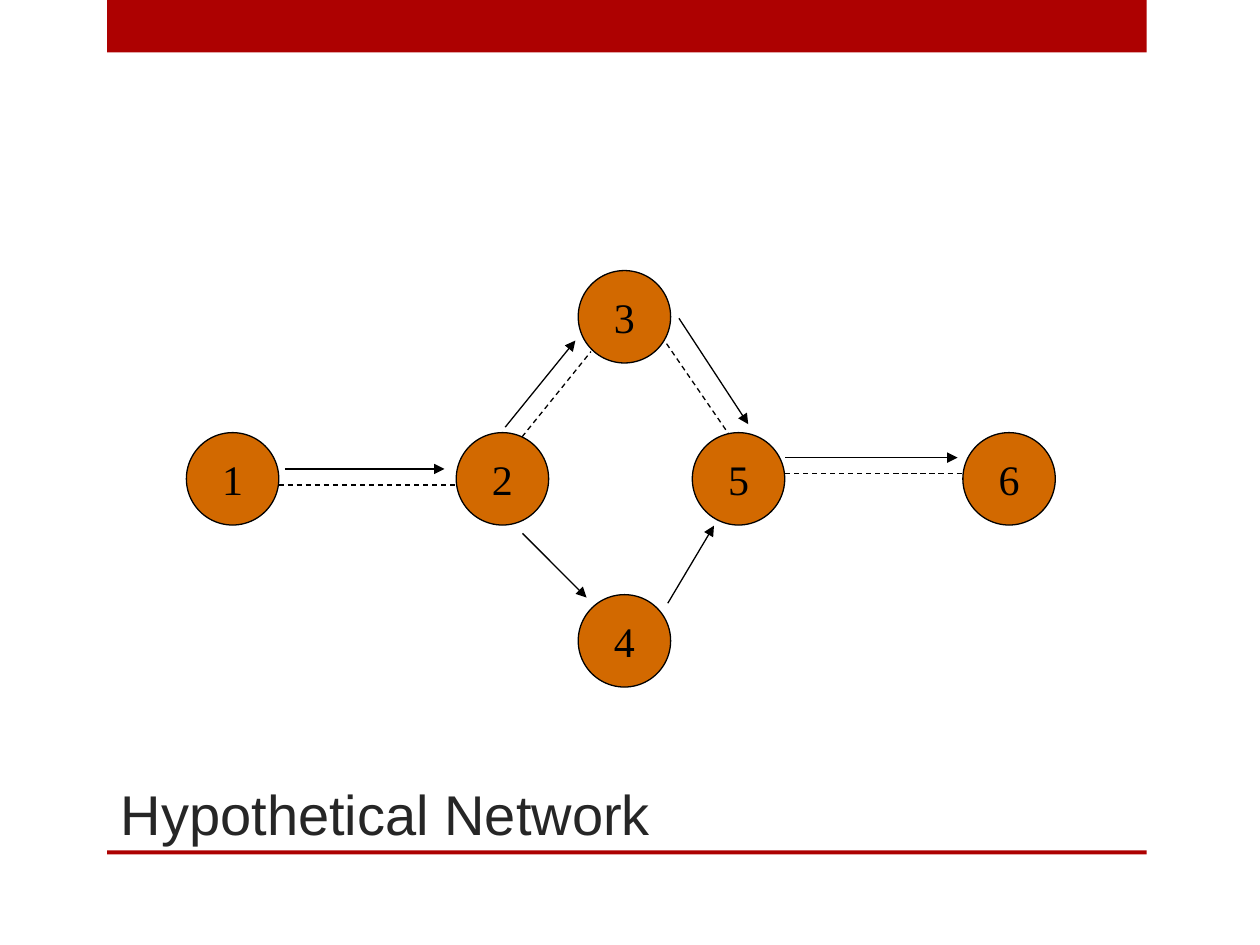
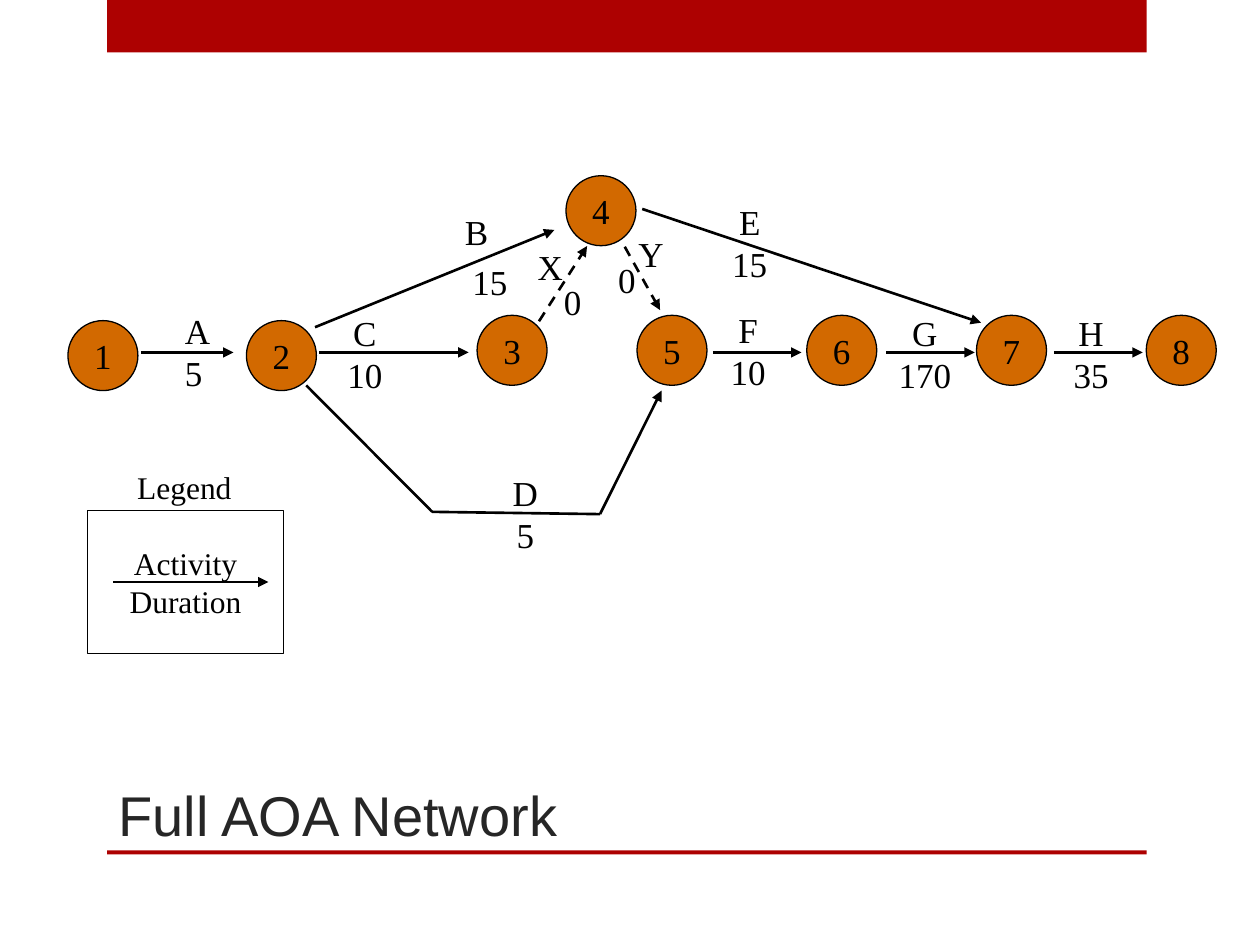
from dataclasses import dataclass

from lxml.etree import SubElement
from pptx import Presentation
from pptx.dml.color import RGBColor
from pptx.enum.dml import MSO_LINE
from pptx.enum.shapes import MSO_CONNECTOR, MSO_SHAPE
from pptx.enum.text import MSO_ANCHOR, MSO_AUTO_SIZE, PP_ALIGN
from pptx.oxml.ns import qn
from pptx.util import Pt


@dataclass(frozen=True)
class Theme:
    band: RGBColor = RGBColor(0xAD, 0x01, 0x01)
    node: RGBColor = RGBColor(0xD2, 0x69, 0x00)
    ink: RGBColor = RGBColor(0, 0, 0)
    title: RGBColor = RGBColor(0x26, 0x26, 0x26)
    title_font: str = "Arial"
    body_font: str = "Times New Roman"
    title_size: float = 32
    large_size: float = 24
    label_size: float = 20
    legend_size: float = 18
    thin: float = 0.75
    thick: float = 1.5


THEME = Theme()


def write_text(shape, text, size=THEME.label_size, font=THEME.body_font,
               color=THEME.ink, align=PP_ALIGN.CENTER, anchor=MSO_ANCHOR.MIDDLE,
               wrap=False, fit=MSO_AUTO_SIZE.NONE):
    """Fill a shape with one paragraph; a newline becomes a line break."""
    frame = shape.text_frame
    frame.word_wrap = wrap
    frame.auto_size = fit
    frame.vertical_anchor = anchor
    paragraph = frame.paragraphs[0]
    paragraph.text = text
    paragraph.alignment = align
    for run in paragraph.runs:
        run.font.size = Pt(size)
        run.font.name = font
        run.font.color.rgb = color


class NetworkDeck:
    def __init__(self, theme):
        self.theme = theme
        self.presentation = Presentation()
        self.presentation.slide_width = Pt(720)
        self.presentation.slide_height = Pt(540)
        self.slide = None

    def add_slide(self, title, left, top, width, height):
        """Start a slide with the shared bands and title style."""
        layout = self.presentation.slide_layouts.get_by_name("Title Only")
        self.slide = self.presentation.slides.add_slide(layout)
        for band_top, band_height in ((0, 30), (486, 2.2)):
            self.add_shape(MSO_SHAPE.RECTANGLE, 61.2, band_top, 594, band_height,
                           fill=self.theme.band)
        placeholder = self.slide.shapes.title
        placeholder.left, placeholder.top = Pt(left), Pt(top)
        placeholder.width, placeholder.height = Pt(width), Pt(height)
        write_text(placeholder, title, size=self.theme.title_size,
                   font=self.theme.title_font, color=self.theme.title,
                   align=PP_ALIGN.LEFT, anchor=MSO_ANCHOR.BOTTOM, wrap=True)

    def add_shape(self, kind, left, top, width, height, fill=None, line=None):
        shape = self.slide.shapes.add_shape(kind, Pt(left), Pt(top), Pt(width), Pt(height))
        shape.shadow.inherit = False
        if fill is None:
            shape.fill.background()
        else:
            shape.fill.solid()
            shape.fill.fore_color.rgb = fill
        if line is None:
            shape.line.fill.background()
        else:
            shape.line.color.rgb = line
            shape.line.width = Pt(self.theme.thin)
        return shape

    def add_node(self, name, center_x, center_y, diameter, size):
        node = self.add_shape(MSO_SHAPE.OVAL, center_x - diameter / 2,
                              center_y - diameter / 2, diameter, diameter,
                              fill=self.theme.node, line=self.theme.ink)
        write_text(node, name, size=size)

    def add_line(self, start, end, width, arrow=True, dashed=False):
        connector = self.slide.shapes.add_connector(
            MSO_CONNECTOR.STRAIGHT, *(Pt(value) for value in (*start, *end)))
        connector.line.color.rgb = self.theme.ink
        connector.line.width = Pt(width)
        if dashed:
            connector.line.dash_style = MSO_LINE.DASH
        properties = connector.element.spPr
        if arrow:
            SubElement(properties.find(qn("a:ln")), qn("a:tailEnd"), type="triangle")
        SubElement(properties, qn("a:effectLst"))

    def add_label(self, text, left, top, width, height, **text_format):
        box = self.slide.shapes.add_textbox(Pt(left), Pt(top), Pt(width), Pt(height))
        write_text(box, text, anchor=MSO_ANCHOR.TOP,
                   fit=MSO_AUTO_SIZE.SHAPE_TO_FIT_TEXT, **text_format)


def build_hypothetical_network(deck):
    deck.add_slide("Hypothetical Network", 61.9, 421.2, 599.8, 66.2)

    # Numbered events
    middle, rise = 273.6, 92.6
    events = {"1": (132.9, middle), "2": (287.1, middle), "3": (356.8, middle - rise),
              "4": (356.8, middle + rise), "5": (422, middle), "6": (576.6, middle)}
    for name, center in events.items():
        deck.add_node(name, *center, 52.8, deck.theme.large_size)

    # Activities
    activities = [((162.8, 268), (254, 268)), ((288.7, 244.1), (328.8, 194.6)),
                  ((388, 181.9), (427.6, 242.4)), ((448.6, 261.5), (547.2, 261.5)),
                  ((298.6, 304.8), (335.2, 341.5)), ((381.6, 344.7), (408, 300.4))]
    for start, end in activities:
        deck.add_line(start, end, deck.theme.thin)

    # Dashed path beside the activities
    path_lines = [((159.2, 277.1), (260.6, 277.1)), ((298.3, 249.7), (337.7, 200.9)),
                  ((380.9, 196.4), (416.2, 247.7)), ((448.6, 270.6), (550.1, 270.6))]
    for start, end in path_lines:
        deck.add_line(start, end, deck.theme.thin, arrow=False, dashed=True)


def build_full_network(deck):
    theme = deck.theme
    deck.add_slide("Full AOA Network", 60.5, 433.4, 593.3, 54.7)

    # Numbered events; 5 to 8 stand at equal steps
    events = {"1": (58.8, 203.2), "2": (160.8, 203.2), "3": (292.6, 200.2),
              "4": (343.4, 120.4)}
    events |= {str(5 + step): (384 + 97 * step, 200.2) for step in range(4)}
    for name, center in events.items():
        deck.add_node(name, *center, 40, theme.label_size)

    # Activities on the main row, then the slanted ones
    for start_x, end_x in ((80.5, 133.4), (182.3, 267.8), (407.4, 458),
                           (506.3, 557), (602.2, 653)):
        deck.add_line((start_x, 201.4), (end_x, 201.4), theme.thick)
    deck.add_line((180, 187), (316.8, 131.4), theme.thick)
    deck.add_line((367, 119.4), (560.6, 184.4), theme.thick)

    # Dummy activities
    deck.add_line((308, 183.6), (335.5, 140.6), theme.thick, dashed=True)
    deck.add_line((357, 141), (377.2, 177.2), theme.thick, dashed=True)

    # Activity D runs below the row in three legs
    corners = [(175, 220.2), (247, 292.5), (342.9, 293.8), (378, 223.2)]
    for start, end in zip(corners, corners[1:]):
        deck.add_line(start, end, theme.thick, arrow=end == corners[-1])

    # Activity over duration
    for text, left, top, width in (
            ("C\n10", 191.2, 174.2, 34.6), ("D\n5", 285.8, 265.9, 28.8),
            ("E\n15", 411.1, 110.9, 34.6), ("F\n10", 410.2, 172.8, 34.6),
            ("G\n170", 506.2, 174.2, 44.6), ("H\n35", 606.2, 174.2, 34.6)):
        deck.add_label(text, left, top, width, 55.4)
    deck.add_label("A\n5", 98.6, 173.5, 28.8, 55.4, align=PP_ALIGN.LEFT)
    for text, left, top, width in (
            ("B", 258.5, 116.6, 28.1), ("15", 262.8, 145.4, 34.6),
            ("X", 300.2, 136.8, 28.8), ("0", 315.2, 157, 24.5),
            ("Y", 357.8, 129.6, 28.8), ("0", 346.1, 144, 24.5)):
        deck.add_label(text, left, top, width, 31, align=PP_ALIGN.LEFT)

    # Legend
    frame = deck.add_shape(MSO_SHAPE.RECTANGLE, 49.9, 291.7, 112.3, 81.9, line=theme.ink)
    write_text(frame, "Activity\nDuration", size=theme.legend_size)
    deck.add_line((64.8, 332.6), (153.4, 332.6), theme.thin)
    deck.add_label("Legend", 71.3, 264.2, 68.4, 28.8, size=theme.legend_size,
                   align=PP_ALIGN.LEFT)


def main():
    deck = NetworkDeck(THEME)
    build_hypothetical_network(deck)
    build_full_network(deck)
    deck.presentation.save("out.pptx")


if __name__ == "__main__":
    main()
